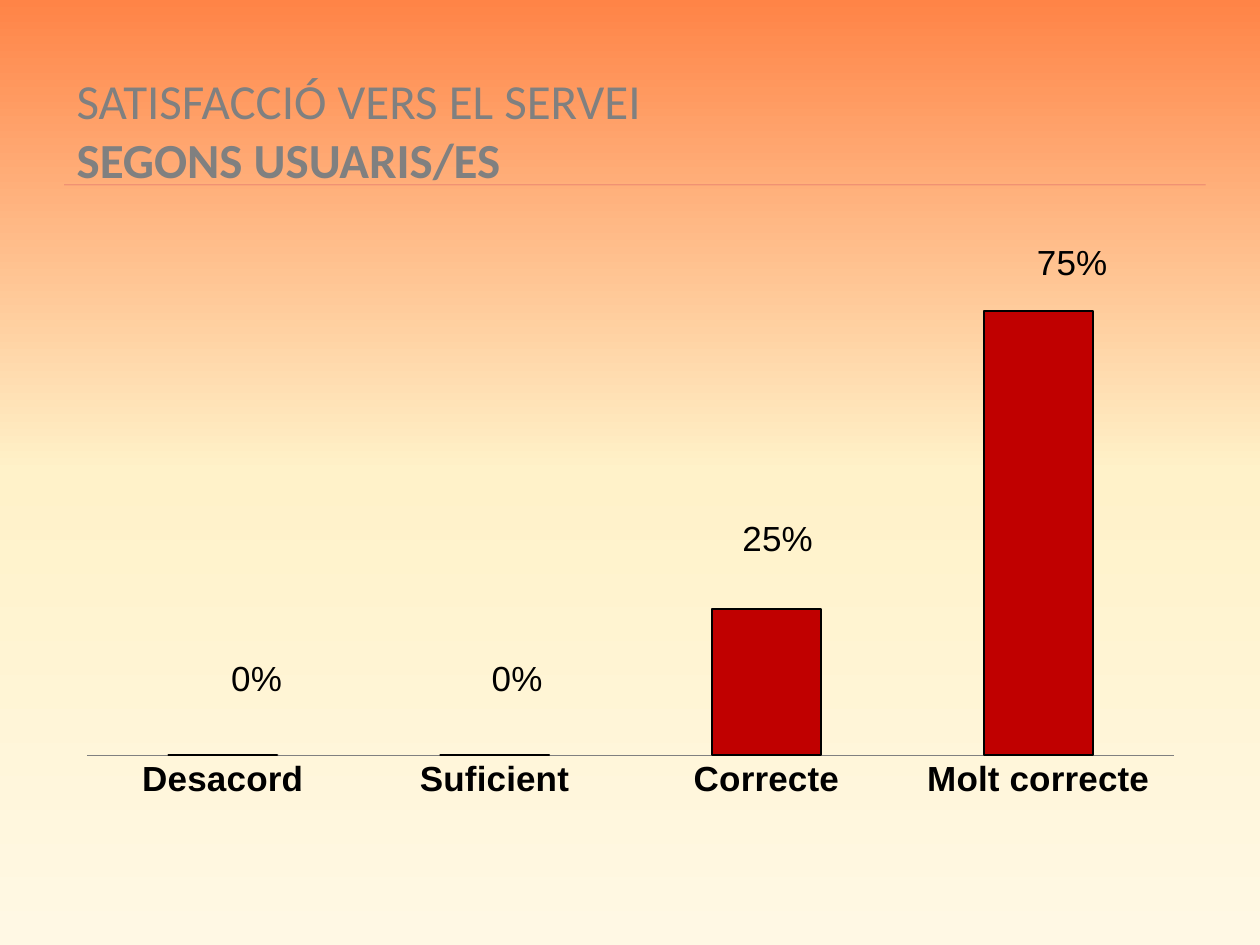
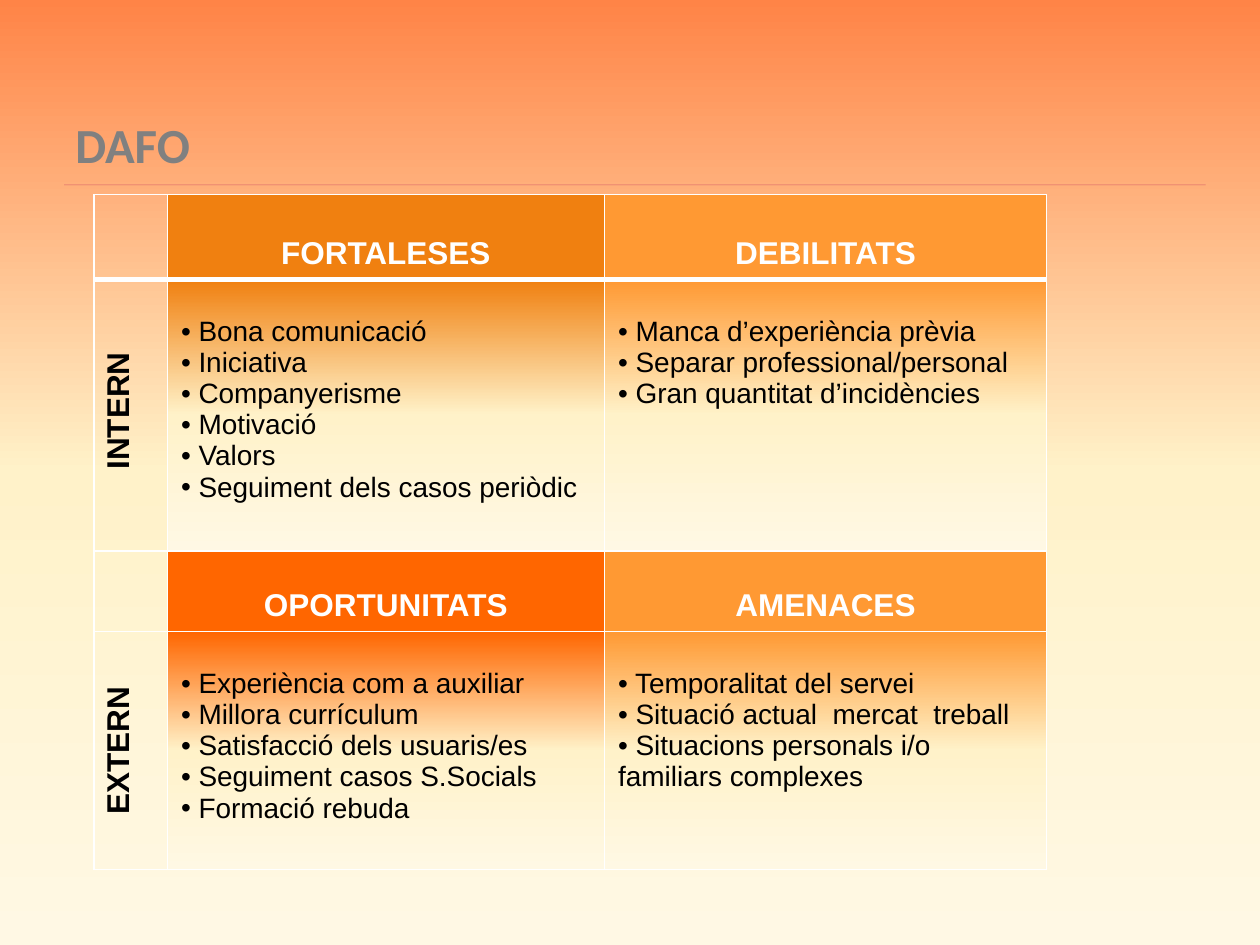
import copy

import pptx
import pptx.chart.data
import pptx.dml.color
import pptx.enum.chart
import pptx.enum.shapes
import pptx.enum.text
import pptx.oxml
import pptx.oxml.ns
import pptx.util

Pt = pptx.util.Pt
qn = pptx.oxml.ns.qn
NS = pptx.oxml.ns.nsdecls("a")

BLACK, WHITE, GREY = "000000", "FFFFFF", "808080"
RULE, BAR, ORANGE = "AC0F54", "C00000", "FF8447"
CREAM, IVORY = "FFF2C9", "FFF8E4"


def rgb(value):
    return pptx.dml.color.RGBColor.from_string(value)


def fade(fill, element, top):
    """Fill downwards from the top colour through cream to ivory."""
    fill.gradient()
    fill.gradient_angle = 270
    stop_list = element.find(".//" + qn("a:gsLst"))
    stop_list.append(copy.deepcopy(stop_list[-1]))
    for stop, color, position in zip(fill.gradient_stops, (top, CREAM, IVORY), (0, 0.5, 1)):
        stop.color.rgb = rgb(color)
        stop.position = position


deck = pptx.Presentation()
deck.slide_width, deck.slide_height = Pt(720), Pt(540)

# Shared background, rule and title
titles = [
    (("SATISFACCIÓ VERS EL SERVEI", False), ("SEGONS USUARIS/ES", True)),
    (("DAFO", True),),
]
title_places = [(36.7, 18.7, 578), (36, 10.3, 648)]
for lines, (left, top, width) in zip(titles, title_places):
    slide = deck.slides.add_slide(deck.slide_layouts[6])
    fade(slide.background.fill, slide._element, ORANGE)

    rule = slide.shapes.add_connector(
        pptx.enum.shapes.MSO_CONNECTOR.STRAIGHT, Pt(36.7), Pt(105.6), Pt(689), Pt(105.6))
    rule.line.color.rgb = rgb(RULE)
    rule.line.width = Pt(0.25)
    rule._element.spPr.find(".//" + qn("a:srgbClr")).append(
        pptx.oxml.parse_xml(f'<a:alpha {NS} val="50000"/>'))
    rule._element.spPr.append(pptx.oxml.parse_xml(f"<a:effectLst {NS}/>"))

    title = slide.shapes.add_textbox(Pt(left), Pt(top), Pt(width), Pt(89)).text_frame
    title.word_wrap = True
    title.vertical_anchor = pptx.enum.text.MSO_ANCHOR.BOTTOM
    title.margin_bottom = 0
    title.paragraphs[0].text = "\v".join(text for text, bold in lines)
    for run, (text, bold) in zip(title.paragraphs[0].runs, lines):
        run.font.name, run.font.size, run.font.bold = "Calibri", Pt(28), bold
        run.font.color.rgb = rgb(GREY)

satisfaction_slide, dafo_slide = deck.slides

# Satisfaction chart
answers = pptx.chart.data.CategoryChartData()
answers.categories = ["Desacord", "Suficient", "Correcte", "Molt correcte"]
answers.add_series("Series 1", (0, 0, 21, 64))
chart = satisfaction_slide.shapes.add_chart(
    pptx.enum.chart.XL_CHART_TYPE.COLUMN_CLUSTERED,
    Pt(36.7), Pt(139.7), Pt(647.3), Pt(324), answers).chart
chart.has_legend = False
chart.has_title = False
chart.font.name, chart.font.size = "Arial", Pt(20)
chart.font.color.rgb = rgb(BLACK)

counts = chart.value_axis
counts.minimum_scale, counts.maximum_scale = 0, 70
counts.has_major_gridlines = False
counts.visible = False

opinions = chart.category_axis
opinions.major_tick_mark = pptx.enum.chart.XL_TICK_MARK.NONE
opinions.format.line.color.rgb = rgb(GREY)
opinions.format.line.width = Pt(0.25)
opinions.tick_labels.font.bold = True
opinions.tick_labels.font.size = Pt(20)
opinions.tick_labels.font.name = "Arial"

plot = chart.plots[0]
plot.gap_width = 150
plot.vary_by_categories = False
bars = plot.series[0]
bars.format.fill.solid()
bars.format.fill.fore_color.rgb = rgb(BAR)
bars.format.line.color.rgb = rgb(BLACK)
bars.format.line.width = Pt(1.25)

CHART_NS = pptx.oxml.ns.nsdecls("c")
plot_area = plot._element.getparent()
for old_layout in plot_area.findall(qn("c:layout")):
    plot_area.remove(old_layout)
plot_area.insert(0, pptx.oxml.parse_xml(
    f'<c:layout {CHART_NS}><c:manualLayout><c:layoutTarget val="inner"/>'
    '<c:xMode val="edge"/><c:yMode val="edge"/><c:x val="0.02"/><c:y val="0.04"/>'
    '<c:w val="0.96"/><c:h val="0.86"/></c:manualLayout></c:layout>'))

shares = [("0%", 0.03, -0.09), ("0%", 0.02, -0.09), ("25%", 0.01, -0.08), ("75%", 0.03, -0.04)]
for index, (share, shift_x, shift_y) in enumerate(shares):
    label = bars.points[index].data_label
    label.text_frame.text = share
    label.position = pptx.enum.chart.XL_LABEL_POSITION.OUTSIDE_END
    font = label.text_frame.paragraphs[0].runs[0].font
    font.name, font.size, font.bold = "Arial", Pt(20), False
    font.color.rgb = rgb(BLACK)
    label_index = bars._element.findall(".//" + qn("c:dLbl") + "/" + qn("c:idx"))[index]
    label_index.addnext(pptx.oxml.parse_xml(
        f'<c:layout {CHART_NS}><c:manualLayout><c:x val="{shift_x}"/>'
        f'<c:y val="{shift_y}"/></c:manualLayout></c:layout>'))

# Moved labels stand without leader lines
bars.data_labels.show_value = True
labels_element = bars._element.find(qn("c:dLbls"))
for leader in labels_element.findall(qn("c:showLeaderLines")):
    leader.set("val", "0")
labels_element.append(pptx.oxml.parse_xml(
    f'<c:extLst {CHART_NS}><c:ext uri="{{CE6537A1-D6FC-4f65-9D91-7224C49458BB}}" '
    'xmlns:c15="http://schemas.microsoft.com/office/drawing/2012/chart">'
    '<c15:showLeaderLines val="0"/></c:ext></c:extLst>'))

# DAFO table
column_widths = (41.8, 249.8, 252.7)
row_heights = (47.6, 155, 45.3, 136)
dafo = dafo_slide.shapes.add_table(
    4, 3, Pt(53.8), Pt(111.3), Pt(sum(column_widths)), Pt(sum(row_heights))).table
dafo.first_row = dafo.horz_banding = False
for column, width in zip(dafo.columns, column_widths):
    column.width = Pt(width)
for row, height in zip(dafo.rows, row_heights):
    row.height = Pt(height)

for row_number, row in enumerate(dafo.rows):
    for cell in row.cells:
        cell.margin_left = cell.margin_right = Pt(7.9)
        cell.margin_top = cell.margin_bottom = Pt(3.6)
        cell.fill.background()
        top_width = 3 if row_number == 1 else 1
        bottom_width = 3 if row_number == 0 else 1
        edges = (("L", 1), ("R", 1), ("T", top_width), ("B", bottom_width))
        for position, (side, width) in enumerate(edges):
            cell._tc.get_or_add_tcPr().insert(position, pptx.oxml.parse_xml(
                f'<a:ln{side} {NS} w="{Pt(width)}"><a:solidFill>'
                f'<a:srgbClr val="{WHITE}"/></a:solidFill></a:ln{side}>'))

for row_number, origin in ((1, " INTERN"), (3, "EXTERN")):
    cell = dafo.cell(row_number, 0)
    cell._tc.get_or_add_tcPr().set("vert", "vert270")
    cell.text_frame.text = origin
    paragraph = cell.text_frame.paragraphs[0]
    paragraph.alignment = pptx.enum.text.PP_ALIGN.CENTER
    font = paragraph.runs[0].font
    font.name, font.size, font.bold = "Arial", Pt(18), True
    font.color.rgb = rgb(BLACK)

quadrants = [
    (0, 1, "FORTALESES", "F08010", [
        "Bona comunicació", "Iniciativa", "Companyerisme", "Motivació", "Valors",
        "Seguiment dels casos periòdic"]),
    (0, 2, "DEBILITATS", "FF9933", [
        "Manca d’experiència prèvia", "Separar professional/personal",
        "Gran quantitat d’incidències"]),
    (2, 1, "OPORTUNITATS", "FF6600", [
        "Experiència com a auxiliar", "Millora currículum", "Satisfacció dels usuaris/es",
        "Seguiment casos S.Socials", "Formació rebuda"]),
    (2, 2, "AMENACES", "FF9933", [
        "Temporalitat del servei", "Situació actual  mercat  treball",
        "Situacions personals i/o familiars complexes"]),
]
for row_number, column_number, heading, color, points in quadrants:
    header = dafo.cell(row_number, column_number)
    header.fill.solid()
    header.fill.fore_color.rgb = rgb(color)
    header.margin_top = Pt(23.3 if row_number == 0 else 21)
    header.text_frame.text = heading
    paragraph = header.text_frame.paragraphs[0]
    paragraph.alignment = pptx.enum.text.PP_ALIGN.CENTER
    font = paragraph.runs[0].font
    font.name, font.size, font.bold = "Arial", Pt(18), True
    font.color.rgb = rgb(WHITE)

    body = dafo.cell(row_number + 1, column_number)
    fade(body.fill, body._tc, color)
    body.margin_top = Pt(21)
    body.text_frame.text = "\n".join(" " + point for point in points)
    for paragraph in body.text_frame.paragraphs:
        properties = paragraph._p.get_or_add_pPr()
        properties.append(pptx.oxml.parse_xml(f'<a:buFont {NS} typeface="Arial"/>'))
        properties.append(pptx.oxml.parse_xml(f'<a:buChar {NS} char="•"/>'))
        font = paragraph.runs[0].font
        font.name, font.size, font.bold = "Arial", Pt(16), False
        font.color.rgb = rgb(BLACK)

deck.save("out.pptx")
